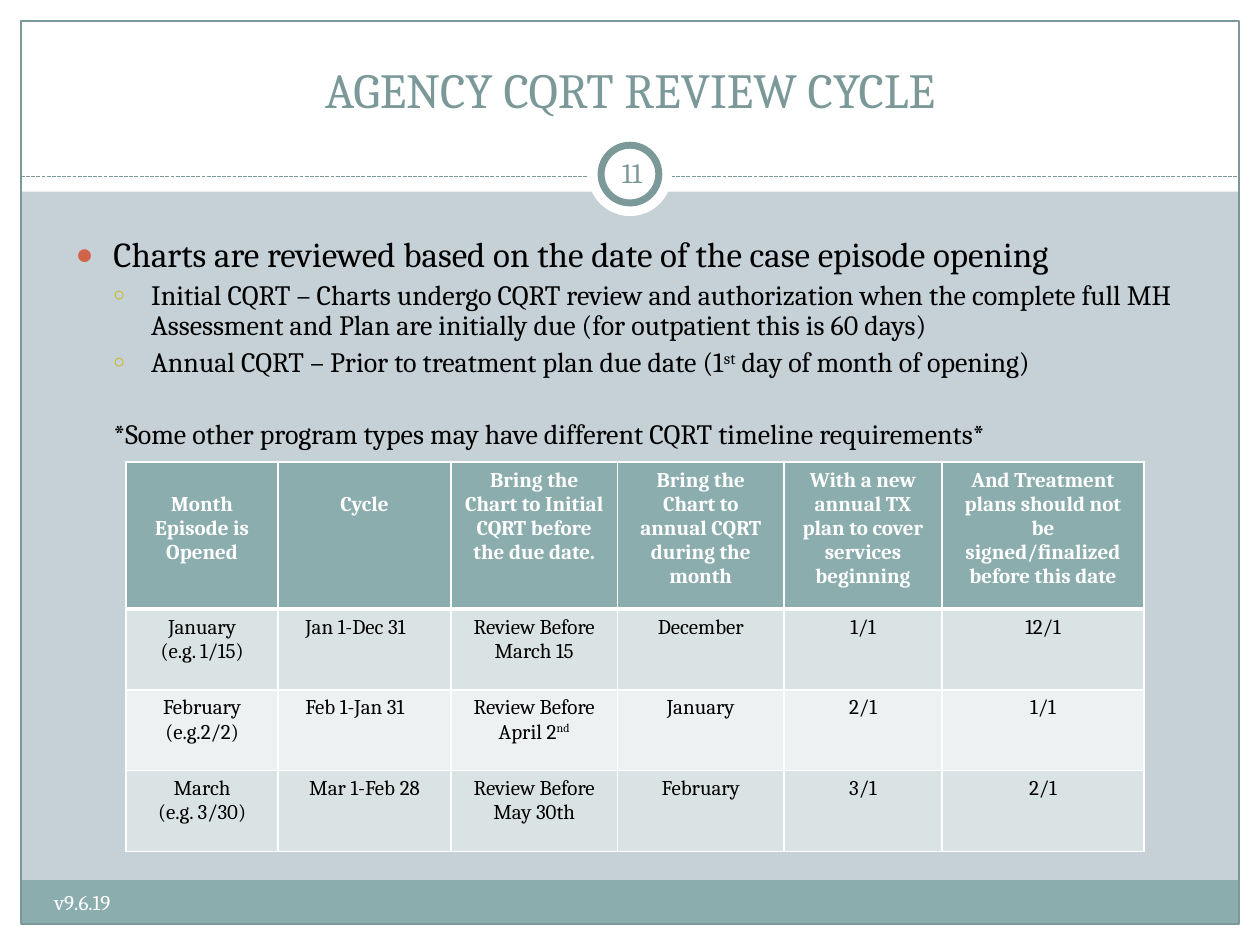
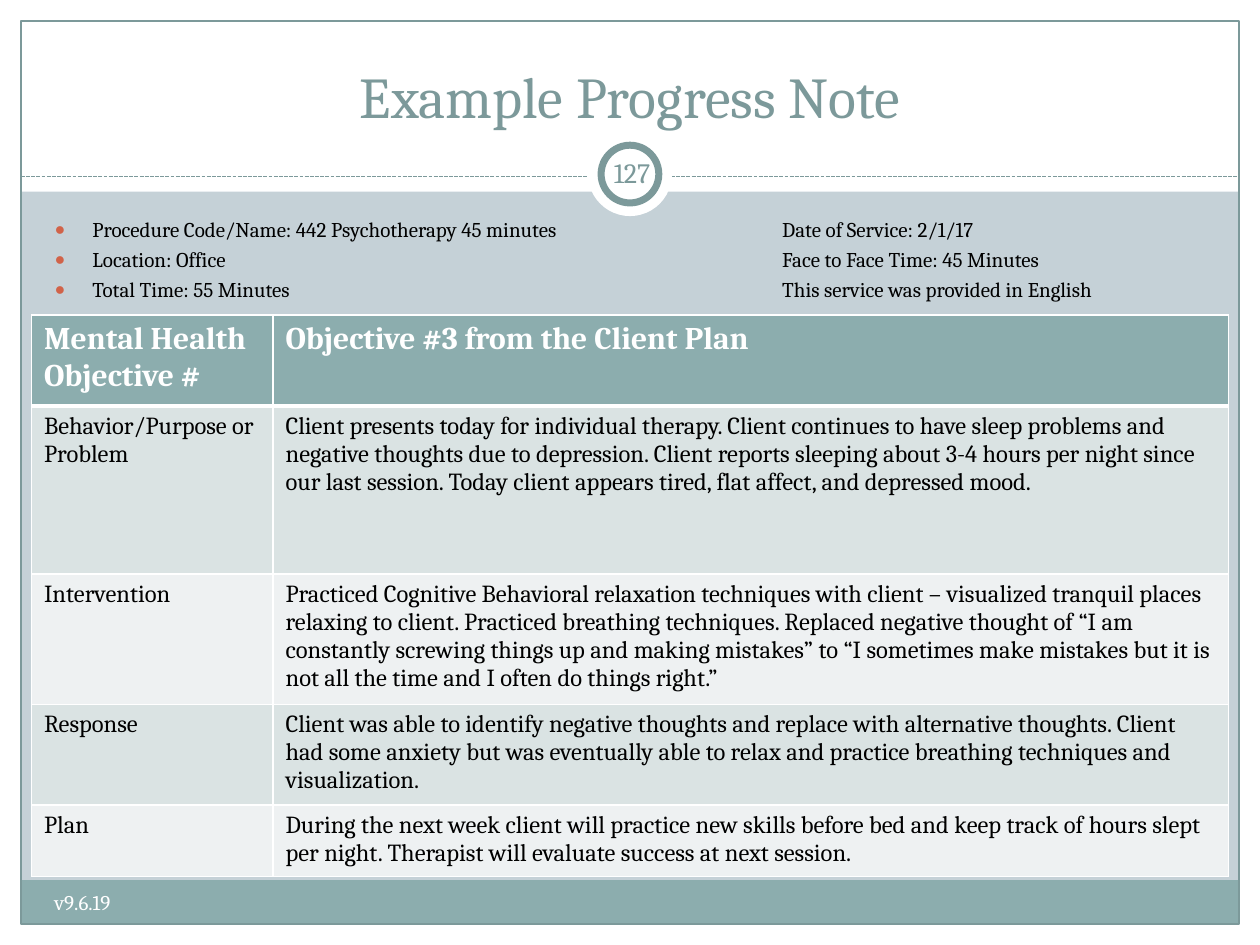
from lxml.etree import SubElement
from pptx import Presentation
from pptx.dml.color import RGBColor
from pptx.enum.dml import MSO_LINE
from pptx.enum.shapes import MSO_CONNECTOR, MSO_SHAPE
from pptx.enum.text import MSO_ANCHOR, MSO_AUTO_SIZE, PP_ALIGN
from pptx.oxml.ns import qn
from pptx.util import Pt

WHITE = RGBColor(0xFF, 0xFF, 0xFF)
BLACK = RGBColor(0, 0, 0)
MIST = RGBColor(0xC5, 0xD1, 0xD7)
TEAL = RGBColor(0x8C, 0xAD, 0xAE)
SLATE = RGBColor(0x7C, 0x99, 0x9A)
BAND_DARK = RGBColor(0xDA, 0xE3, 0xE3)
BAND_LIGHT = RGBColor(0xEE, 0xF1, 0xF2)
RUST = RGBColor(0xD1, 0x63, 0x49)
GOLD = RGBColor(0xCC, 0xB4, 0x00)

FONT = "Cambria"
PAGE_W, PAGE_H = 720, 540
EDGE = 12
RULE_Y = 101
INDENT = 21.6
BULLETS = [("●", RUST, 85), ("○", GOLD, 70)]

REVIEW_POINTS = [
    (0, 20, "Charts are reviewed based on the date of the case episode opening"),
    (1, 16, "Initial CQRT – Charts undergo CQRT review and authorization when the complete "
            "full MH Assessment and Plan are initially due (for outpatient this is 60 days)"),
    (1, 16, "Annual CQRT – Prior to treatment plan due date (1^st^ day of month of opening)"),
]
REVIEW_NOTE = "*Some other program types may have different CQRT timeline requirements*"
REVIEW_CYCLE = [
    ["Month Episode is Opened", "Cycle", "Bring the Chart to Initial CQRT before the due date.",
     "Bring the Chart to annual CQRT during the month",
     "With a new annual TX plan to cover services beginning",
     "And Treatment plans should not be signed/finalized before this date"],
    ["January\n(e.g. 1/15)", "Jan 1-Dec 31", "Review Before March 15", "December", "1/1", "12/1"],
    ["February\n(e.g.2/2)", "Feb 1-Jan 31", "Review Before April 2^nd^", "January", "2/1", "1/1"],
    ["March\n(e.g. 3/30)", "Mar 1-Feb 28", "Review Before May 30th", "February", "3/1", "2/1"],
]
SERVICE_FACTS = ["Procedure Code/Name: 442 Psychotherapy 45 minutes", "Location: Office",
                 "Total Time: 55 Minutes"]
SERVICE_TIMES = ["Date of Service: 2/1/17", "Face to Face Time: 45 Minutes",
                 "This service was provided in English"]
PROGRESS_NOTE = [
    ["Mental Health Objective #", "Objective #3 from the Client Plan"],
    ["Behavior/Purpose or Problem",
     "Client presents today for individual therapy. Client continues to have sleep problems and "
     "negative thoughts due to depression. Client reports sleeping about 3-4 hours per night "
     "since our last session. Today client appears tired, flat affect, and depressed mood."],
    ["Intervention",
     "Practiced Cognitive Behavioral relaxation techniques with client – visualized tranquil "
     "places relaxing to client. Practiced breathing techniques. Replaced negative thought of "
     "“I am constantly screwing things up and making mistakes” to “I sometimes make mistakes "
     "but it is not all the time and I often do things right.”"],
    ["Response",
     "Client was able to identify negative thoughts and replace with alternative thoughts. "
     "Client had some anxiety but was eventually able to relax and practice breathing "
     "techniques and visualization."],
    ["Plan",
     "During the next week client will practice new skills before bed and keep track of hours "
     "slept per night. Therapist will evaluate success at next session."],
]


def apply(target, values):
    """Set each named attribute of the target."""
    for name, value in values.items():
        setattr(target, name, value)


def points(box):
    """Turn a box of numbers into lengths."""
    return [Pt(value) for value in box]


def place(placeholder, box):
    """Move a placeholder to a box."""
    apply(placeholder, dict(zip(("left", "top", "width", "height"), points(box))))


def write(paragraph, text, size, color=BLACK, bold=False, **layout):
    """Write text into a paragraph, raising the parts between carets."""
    apply(paragraph, layout)
    for index, part in enumerate(text.split("^")):
        run = paragraph.add_run()
        run.text = part
        apply(run.font, {"name": FONT, "size": Pt(size), "bold": bold})
        run.font.color.rgb = color
        if index % 2:
            run.font._element.set("baseline", "30000")


def next_paragraph(frame):
    """Give the empty first paragraph of a frame, or a new one."""
    first = frame.paragraphs[0]
    return frame.add_paragraph() if first.runs else first


def indent(paragraph, level, bulleted=True):
    """Set the indent of a list paragraph and its bullet."""
    props = paragraph._p.get_or_add_pPr()
    props.set("marL", str(Pt(INDENT * (level + bulleted))))
    props.set("indent", str(Pt(-INDENT * bulleted)))
    if not bulleted:
        SubElement(props, qn("a:buNone"))
        return
    mark, color, percent = BULLETS[level]
    SubElement(SubElement(props, qn("a:buClr")), qn("a:srgbClr")).set("val", str(color))
    SubElement(props, qn("a:buSzPct")).set("val", str(percent * 1000))
    SubElement(props, qn("a:buChar")).set("char", mark)


def add_label(slide, box, lines, size, color, inset, anchor=MSO_ANCHOR.TOP, **layout):
    """Add a text box with one paragraph for each line."""
    frame = slide.shapes.add_textbox(*points(box)).text_frame
    sides = ("margin_left", "margin_top", "margin_right", "margin_bottom")
    apply(frame, dict(zip(sides, points(inset)), word_wrap=True, vertical_anchor=anchor))
    for line in lines:
        write(next_paragraph(frame), line, size, color, **layout)


def add_panel(slide, kind, box, fill=None, line=None, weight=0.75):
    """Add a preset shape with a plain fill and line."""
    panel = slide.shapes.add_shape(kind, *points(box))
    panel.shadow.inherit = False
    if fill is None:
        panel.fill.background()
    else:
        panel.fill.solid()
        panel.fill.fore_color.rgb = fill
    if line is None:
        panel.line.fill.background()
    else:
        panel.line.color.rgb = line
        panel.line.width = Pt(weight)


def add_disc(slide, diameter, **look):
    """Add a circle centred on the page number."""
    box = ((PAGE_W - diameter) / 2, 99.5 - diameter / 2, diameter, diameter)
    add_panel(slide, MSO_SHAPE.OVAL, box, WHITE, **look)


def build_frame(slide, layout):
    """Draw the shared frame and hand it over to the layout."""
    layout.background.fill.solid()
    layout.background.fill.fore_color.rgb = MIST
    for placeholder in list(layout.placeholders)[2:]:
        layout.shapes.element.remove(placeholder.element)
    before = len(slide.shapes)
    inner_w, inner_h = PAGE_W - 2 * EDGE, PAGE_H - 2 * EDGE
    for box in ((0, PAGE_H - EDGE, PAGE_W, EDGE), (0, 0, PAGE_W, 109.5),
                (0, 0, EDGE, PAGE_H), (PAGE_W - EDGE, 0, EDGE, PAGE_H)):
        add_panel(slide, MSO_SHAPE.RECTANGLE, box, WHITE)
    add_panel(slide, MSO_SHAPE.RECTANGLE, (EDGE, 503, inner_w, 25), TEAL)
    add_panel(slide, MSO_SHAPE.RECTANGLE, (EDGE, EDGE, inner_w, inner_h), line=SLATE)
    rule = slide.shapes.add_connector(
        MSO_CONNECTOR.STRAIGHT, *points((EDGE, RULE_Y, PAGE_W - EDGE, RULE_Y)))
    rule.line.color.rgb = SLATE
    apply(rule.line, {"width": Pt(0.75), "dash_style": MSO_LINE.SQUARE_DOT})
    SubElement(rule.element.spPr, qn("a:effectLst"))
    add_disc(slide, 48)
    add_disc(slide, 33, line=SLATE, weight=4)
    for part in list(slide.shapes)[before:]:
        layout.shapes.element.append(part.element)


def build_heading(slide, box, title, size, anchor, number):
    """Write the title, the page number and the version."""
    place(slide.shapes.title, box)
    frame = slide.shapes.title.text_frame
    apply(frame, {"vertical_anchor": anchor, "auto_size": MSO_AUTO_SIZE.NONE})
    write(frame.paragraphs[0], title, size, SLATE, alignment=PP_ALIGN.CENTER)
    add_label(slide, (343.2, 81, 36, 34.5), [number], 16, SLATE, (3.6,) * 4,
              MSO_ANCHOR.MIDDLE, alignment=PP_ALIGN.CENTER)
    add_label(slide, (24, 505, 282, 28), ["v9.6.19"], 12, WHITE, (7.2, 3.6, 7.2, 3.6))


def build_list(slide, box, items, spacing):
    """Fill the body placeholder with bulleted items."""
    body = slide.placeholders[1]
    place(body, box)
    body.text_frame.auto_size = MSO_AUTO_SIZE.NONE
    for level, size, text in items:
        paragraph = next_paragraph(body.text_frame)
        write(paragraph, text, size, level=level, line_spacing=spacing,
              space_before=Pt(size * 0.23))
        indent(paragraph, level)
    return body.text_frame


def set_borders(cell, bottom):
    """Draw white borders around a cell."""
    props = cell._tc.get_or_add_tcPr()
    for index, side in enumerate(("lnL", "lnR", "lnT", "lnB")):
        width = bottom if side == "lnB" else 1
        border = props.makeelement(qn(f"a:{side}"), {"w": str(Pt(width))})
        fill = SubElement(border, qn("a:solidFill"))
        SubElement(fill, qn("a:srgbClr")).set("val", str(WHITE))
        props.insert(index, border)


def build_table(slide, corner, widths, heights, rows, sizes, align):
    """Add a banded table with a bold header row."""
    box = (*corner, sum(widths), sum(heights))
    table = slide.shapes.add_table(len(rows), len(widths), *points(box)).table
    table.horz_banding = False
    for column, width in zip(table.columns, widths):
        column.width = Pt(width)
    for r, (row, height) in enumerate(zip(rows, heights)):
        table.rows[r].height = Pt(height)
        header = r == 0
        for c, text in enumerate(row):
            cell = table.cell(r, c)
            cell.fill.solid()
            cell.fill.fore_color.rgb = TEAL if header else (BAND_LIGHT, BAND_DARK)[r % 2]
            set_borders(cell, 3 if header or r == 1 and False else 1)
            for line in text.split("\n"):
                write(next_paragraph(cell.text_frame), line, sizes[not header],
                      WHITE if header else BLACK, header, alignment=align)
    return table


def build_review_cycle(slide):
    """Build the slide on the review cycle."""
    build_heading(slide, (36, 18, 648, 66), "AGENCY CQRT REVIEW CYCLE", 28,
                  MSO_ANCHOR.MIDDLE, "11")
    frame = build_list(slide, (36, 132, 648, 360), REVIEW_POINTS, 0.9)
    note = frame.add_paragraph()
    write(note, REVIEW_NOTE, 16, level=1, line_spacing=0.9, space_before=Pt(24))
    indent(note, 1, bulleted=False)
    table = build_table(slide, (72, 264), (87, 98.7, 95.2, 95.2, 90.2, 115.5),
                        (84, 46.2, 46.2, 46.2), REVIEW_CYCLE, (12, 12), PP_ALIGN.CENTER)
    for column in (0, 1):
        table.cell(0, column).margin_top = Pt(17.5)
    for row in (1, 2):
        cycle = table.cell(row, 1)
        cycle.margin_left = Pt(15.5)
        cycle.text_frame.paragraphs[0].alignment = PP_ALIGN.LEFT


def build_progress_note(slide):
    """Build the slide with the example note."""
    build_heading(slide, (24, 18, 672, 60), "Example Progress Note", 33,
                  MSO_ANCHOR.BOTTOM, "127")
    left, top = 24, 120
    build_list(slide, (left, top, 670, 360), [(0, 12, fact) for fact in SERVICE_FACTS], 1.0)
    add_label(slide, (left + 423, top, 240, 60), SERVICE_TIMES, 12, BLACK, (0, 3.6, 0, 3.6),
              line_spacing=1.0, space_before=Pt(12 * 0.23))
    build_table(slide, (18, 180), (138, 546), (52, 96, 71, 56, 39), PROGRESS_NOTE,
                (18, 14), PP_ALIGN.LEFT)


def main():
    """Build and save the presentation."""
    deck = Presentation()
    apply(deck, {"slide_width": Pt(PAGE_W), "slide_height": Pt(PAGE_H)})
    layout = deck.slide_layouts[1]
    slides = [deck.slides.add_slide(layout) for _ in range(2)]
    build_frame(slides[0], layout)
    build_review_cycle(slides[0])
    build_progress_note(slides[1])
    deck.save("out.pptx")


if __name__ == "__main__":
    main()
